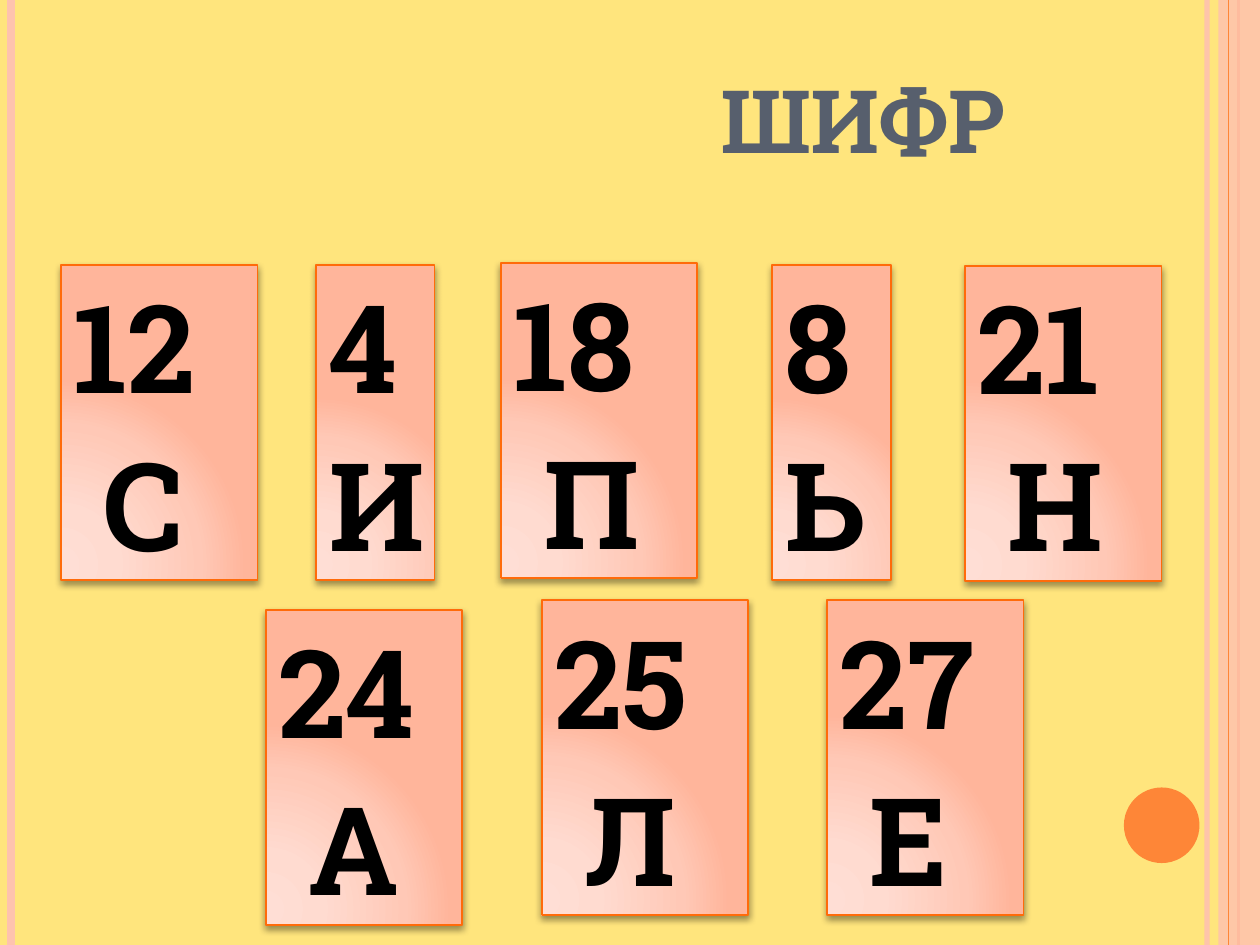
from dataclasses import dataclass

from lxml.etree import SubElement
from pptx import Presentation
from pptx.dml.color import RGBColor
from pptx.enum.shapes import MSO_CONNECTOR, MSO_SHAPE
from pptx.enum.text import MSO_ANCHOR, PP_ALIGN
from pptx.oxml import parse_xml
from pptx.oxml.ns import nsdecls, qn
from pptx.util import Inches, Pt

# The slide is a grid of 100 columns by 75 rows.
COLS, ROWS = 100, 75
CELL = Inches(10) // COLS
FONT = "Roboto Slab"
COLORS = {
    "back": "FFE57D",
    "pale": "FEC3AE",
    "orange": "FE8637",
    "border": "FF6B0A",
    "title": "575F6D",
    "text": "000000",
}
CARD_STOPS = {0: "FFDED5", 30: "FFDBD0", 75: "FFC8B6", 100: "FFB59B"}
CARD_HEIGHT, NARROW, NORMAL, WIDE = 25, 9.4, 15.6, 16.4


@dataclass
class Card:
    number: str
    letter: str
    col: float
    row: float
    width: float = NORMAL


@dataclass
class Stripe:
    col: float
    color: str
    weight: float
    opacity: int = 100


CARDS = [
    Card("4", "И", 25.1, 21.05, NARROW),
    Card("8", "Ь", 61.3, 21.05, NARROW),
    Card("12", " С", 4.85, 21.05),
    Card("18", " П", 39.75, 20.9),
    Card("21", " Н", 76.6, 21.1),
    Card("24", " А", 21.1, 48.4),
    Card("25", " Л", 43, 47.65, WIDE),
    Card("27", " Е", 65.65, 47.65),
]
LOW_STRIPES = [
    Stripe(95.8, "pale", 3, 93),
    Stripe(0.85, "pale", 4.5),
    Stripe(98.3, "orange", 1.5),
]
TOP_STRIPE = Stripe(97.5, "orange", 0.75)


def grid(*cells: float) -> list[int]:
    return [round(n * CELL) for n in cells]


def rgb(name: str) -> RGBColor:
    return RGBColor.from_string(COLORS[name])


def set_opacity(element, percent: int) -> None:
    if percent < 100:
        color = next(element.iter(qn("a:srgbClr")))
        SubElement(color, qn("a:alpha"), val=str(percent * 1000))


def set_indent(p, left: float, first: float) -> None:
    p_pr = p._p.get_or_add_pPr()
    for name, cells in {"marL": left, "indent": first}.items():
        p_pr.set(name, str(round(cells * CELL)))


def add_plain(slide, kind, box: tuple, color: str, opacity: int = 100):
    sp = slide.shapes.add_shape(kind, *grid(*box))
    sp.shadow.inherit = False
    sp.line.fill.background()
    sp.fill.solid()
    sp.fill.fore_color.rgb = rgb(color)
    set_opacity(sp._element.spPr, opacity)
    return sp


def add_stripe(slide, stripe: Stripe) -> None:
    ends = grid(stripe.col, 0, stripe.col, ROWS)
    line = slide.shapes.add_connector(MSO_CONNECTOR.STRAIGHT, *ends)
    line.line.color.rgb = rgb(stripe.color)
    line.line.width = Pt(stripe.weight)
    sp_pr = line._element.spPr
    set_opacity(sp_pr, stripe.opacity)
    SubElement(sp_pr, qn("a:effectLst"))


def write(p, text: str, size: float, color: str):
    r = p.add_run()
    r.text = text
    for name, value in {"name": FONT, "size": Pt(size), "bold": True}.items():
        setattr(r.font, name, value)
    r.font.color.rgb = rgb(color)
    return r


def add_title(slide, text: str) -> None:
    tf = slide.shapes.add_textbox(*grid(5, 3, 81.7, 11.1)).text_frame
    tf.word_wrap = True
    tf.vertical_anchor = MSO_ANCHOR.BOTTOM
    p = tf.paragraphs[0]
    p.alignment = PP_ALIGN.CENTER
    set_indent(p, 22.6, 0)
    r = write(p, text, 50, "title")
    r.font._element.set("cap", "small")


def style_card(sp) -> None:
    """Give the card its glow from the lower left corner and a soft shadow."""
    stops = "".join(
        f'<a:gs pos="{pos * 1000}"><a:srgbClr val="{color}"/></a:gs>'
        for pos, color in CARD_STOPS.items()
    )
    sp_pr = sp._element.spPr
    sp_pr.replace(sp_pr.find(qn("a:solidFill")), parse_xml(
        f'<a:gradFill {nsdecls("a")} rotWithShape="1"><a:gsLst>{stops}</a:gsLst>'
        '<a:path path="circle"><a:fillToRect l="5000" t="100000" r="120000"'
        ' b="10000"/></a:path></a:gradFill>'))
    sp_pr.find(qn("a:effectLst")).append(parse_xml(
        f'<a:outerShdw {nsdecls("a")} blurRad="{Pt(4)}" dist="{Pt(2)}"'
        ' dir="5400000" rotWithShape="0"><a:srgbClr val="000000">'
        '<a:alpha val="40000"/></a:srgbClr></a:outerShdw>'))
    sp.line.color.rgb = rgb("border")
    sp.line.width = Pt(1)


def add_card(slide, card: Card) -> None:
    box = (card.col, card.row, card.width, CARD_HEIGHT)
    sp = add_plain(slide, MSO_SHAPE.RECTANGLE, box, "pale")
    style_card(sp)
    tf = sp.text_frame
    tf.word_wrap = True
    tf.vertical_anchor = MSO_ANCHOR.TOP
    layout = {"alignment": PP_ALIGN.LEFT, "space_before": Pt(6)}
    for p, text in zip((tf.paragraphs[0], tf.add_paragraph()),
                       (card.number, card.letter)):
        for name, value in layout.items():
            setattr(p, name, value)
        set_indent(p, 3, -3)
        write(p, text, 70, "text")


def main() -> None:
    prs = Presentation()
    prs.slide_width, prs.slide_height = grid(COLS, ROWS)
    slide = prs.slides.add_slide(prs.slide_layouts[6])
    slide.background.fill.solid()
    slide.background.fill.fore_color.rgb = rgb("back")

    for stripe in LOW_STRIPES:
        add_stripe(slide, stripe)
    add_plain(slide, MSO_SHAPE.RECTANGLE, (96.7, 0, 3.3, ROWS), "pale", 87)
    add_stripe(slide, TOP_STRIPE)
    add_plain(slide, MSO_SHAPE.OVAL, (89.2, 62.5, 6, 6), "orange")
    add_title(slide, "ШИФР")
    for card in CARDS:
        add_card(slide, card)
    prs.save("out.pptx")


if __name__ == "__main__":
    main()
